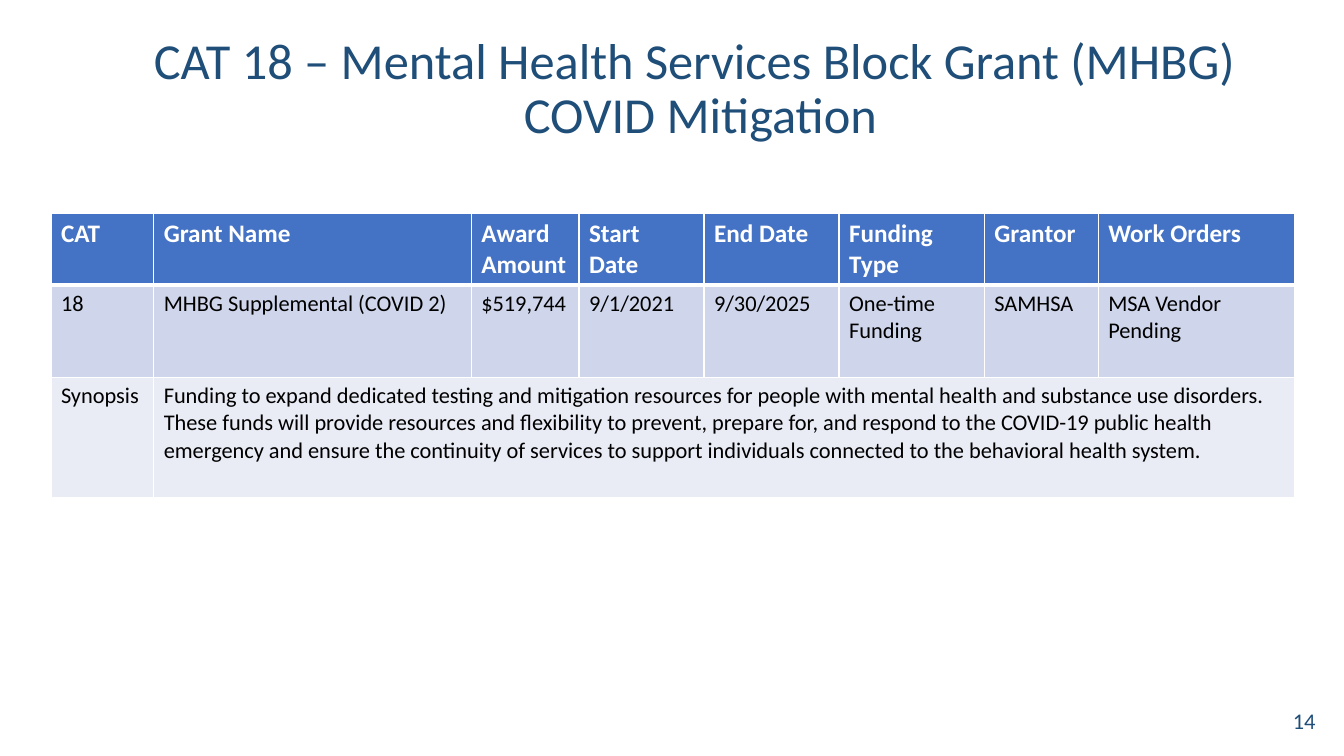
from lxml.etree import SubElement
from pptx import Presentation
from pptx.dml.color import RGBColor
from pptx.enum.text import MSO_ANCHOR, PP_ALIGN
from pptx.oxml.ns import qn
from pptx.util import Pt

COLORS = {
    "title": "1F4E79",
    "header": "4472C4",
    "grant": "CFD5EA",
    "synopsis": "E9EBF5",
    "white": "FFFFFF",
    "black": "000000",
}
FONT = "Calibri"
COLUMN_WIDTHS = [73.4, 226.8, 77, 89.3, 96.5, 103.7, 81.4, 140]
ROW_HEIGHTS = [51, 66, 86]
ROW_FILLS = ["header", "grant", "synopsis"]
GRANT_ROWS = [
    ["CAT", "Grant Name", "Award Amount", "Start Date", "End Date",
     "Funding Type", "Grantor", "Work Orders"],
    ["18", "MHBG Supplemental (COVID 2)", "$519,744", "9/1/2021", "9/30/2025",
     "One-time Funding", "SAMHSA", "MSA Vendor Pending"],
    ["Synopsis",
     "Funding to expand dedicated testing and mitigation resources for people "
     "with mental health and substance use disorders. These funds will provide "
     "resources and flexibility to prevent, prepare for, and respond to the "
     "COVID-19 public health emergency and ensure the continuity of services to "
     "support individuals connected to the behavioral health system."],
]


def style_paragraph(paragraph, size, color, bold=False):
    font = paragraph.font
    font.name = FONT
    font.size = Pt(size)
    font.bold = bold
    font.color.rgb = RGBColor.from_string(COLORS[color])


def add_text(slide, text, left, top, width, height, size, alignment, spacing=1.0):
    shape = slide.shapes.add_textbox(Pt(left), Pt(top), Pt(width), Pt(height))
    frame = shape.text_frame
    frame.word_wrap = True
    frame.vertical_anchor = MSO_ANCHOR.MIDDLE
    paragraph = frame.paragraphs[0]
    paragraph.text = text
    paragraph.alignment = alignment
    paragraph.line_spacing = spacing
    style_paragraph(paragraph, size, "title")


def set_borders(cell, top, bottom):
    properties = cell._tc.get_or_add_tcPr()
    for side, width in (("L", 1), ("R", 1), ("T", top), ("B", bottom)):
        line = SubElement(properties, qn(f"a:ln{side}"), w=str(Pt(width)))
        fill = SubElement(line, qn("a:solidFill"))
        SubElement(fill, qn("a:srgbClr"), val=COLORS["white"])


def style_cell(cell, row_index):
    is_header = row_index == 0
    set_borders(cell, 3 if row_index == 1 else 1, 3 if is_header else 1)
    cell.fill.solid()
    cell.fill.fore_color.rgb = RGBColor.from_string(COLORS[ROW_FILLS[row_index]])
    style_paragraph(cell.text_frame.paragraphs[0], 18 if is_header else 16,
                    "white" if is_header else "black", is_header)


def add_grant_table(slide):
    table = slide.shapes.add_table(
        len(ROW_HEIGHTS), len(COLUMN_WIDTHS), Pt(36.4), Pt(152.4),
        Pt(sum(COLUMN_WIDTHS)), Pt(sum(ROW_HEIGHTS))).table
    for column, width in zip(table.columns, COLUMN_WIDTHS):
        column.width = Pt(width)
    for row_index, (row, height) in enumerate(zip(table.rows, ROW_HEIGHTS)):
        row.height = Pt(height)
        for cell, text in zip(row.cells, GRANT_ROWS[row_index]):
            cell.text = text
        for cell in row.cells:
            style_cell(cell, row_index)
    table.cell(2, 1).merge(table.cell(2, len(COLUMN_WIDTHS) - 1))


def main():
    presentation = Presentation()
    presentation.slide_width = Pt(960)
    presentation.slide_height = Pt(540)
    slide = presentation.slides.add_slide(presentation.slide_layouts[6])
    add_text(slide,
             "CAT 18 – Mental Health Services Block Grant (MHBG) \vCOVID Mitigation",
             41, 12.2, 918.7, 104.4, 36, PP_ALIGN.CENTER, 0.9)
    add_grant_table(slide)
    add_text(slide, "14", 730.8, 500.4, 216, 28.8, 16, PP_ALIGN.RIGHT)
    presentation.save("out.pptx")


if __name__ == "__main__":
    main()
